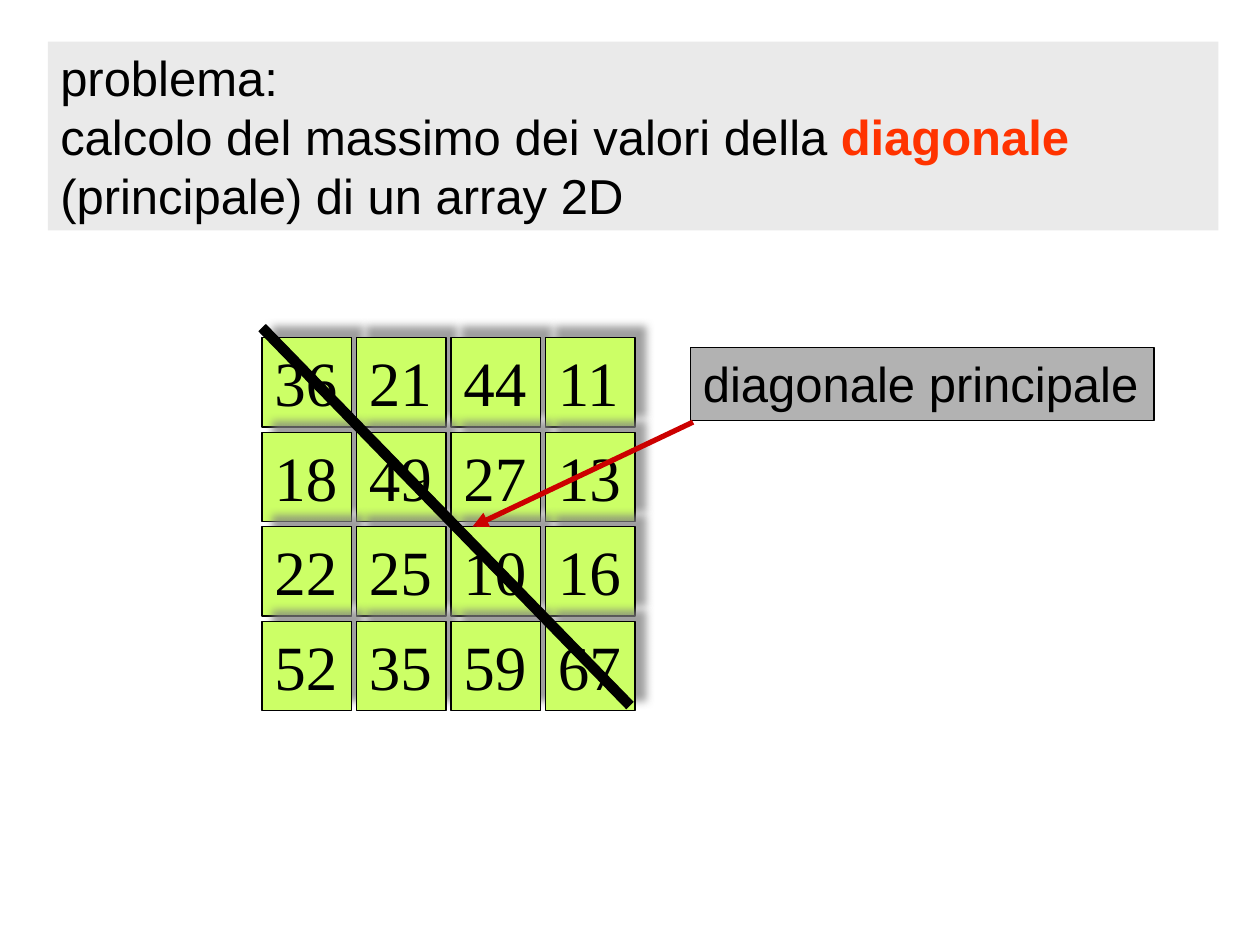
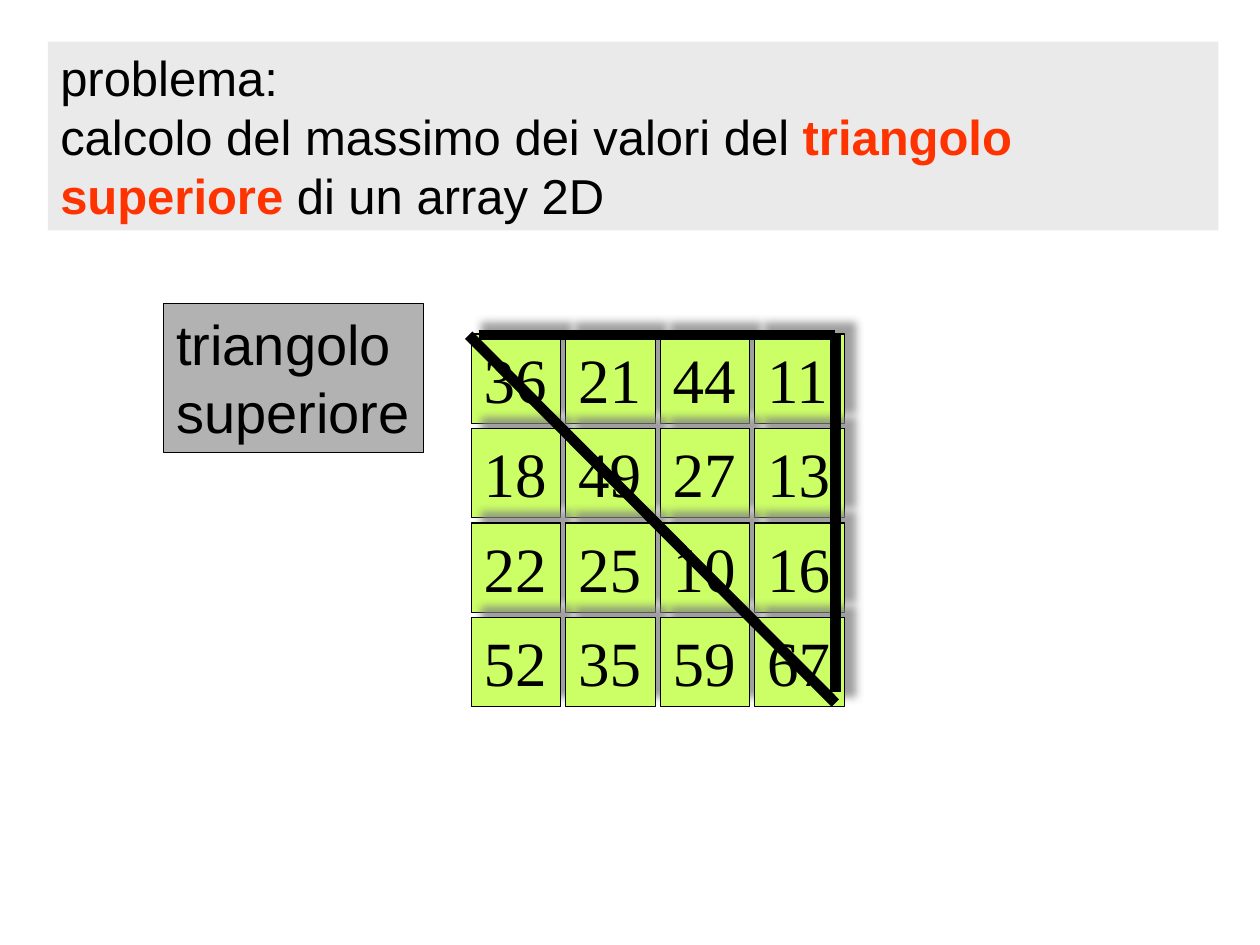
from dataclasses import dataclass

from lxml import etree
from pptx import Presentation, util as u
from pptx.dml.color import RGBColor
from pptx.enum import shapes, text
from pptx.oxml import ns


@dataclass(frozen=True)
class Theme:
    ink: str = "000000"
    band: str = "EAEAEA"
    cell: str = "CCFF66"
    label: str = "B2B2B2"
    accent: str = "FF3300"
    arrow: str = "CC0000"
    shade: str = "808080"
    sans: str = "Arial"
    serif: str = "Times New Roman"
    head: int = 28
    digit: int = 36
    thin: float = 0.75
    thick: float = 6


VALUES = [
    [36, 21, 44, 11],
    [18, 49, 27, 13],
    [22, 25, 10, 16],
    [52, 35, 59, 67],
]
SIDE, STEP = 0.71, 0.75


class Deck:
    def __init__(self, theme):
        self.theme = theme
        self.prs = Presentation()
        self.prs.slide_width = u.Inches(10)
        self.prs.slide_height = u.Inches(7.5)
        self.slide = None

    def page(self):
        self.slide = self.prs.slides.add_slide(self.prs.slide_layouts[6])

    def style(self, run, font, size, color=None, bold=False):
        run.font.name = font
        run.font.size = u.Pt(size)
        run.font.bold = bold
        run.font.color.rgb = RGBColor.from_string(color or self.theme.ink)

    def box(self, x, y, w, h, fill, words, font, size, edge=True, wrap=False):
        """Filled rectangle with left-aligned text."""
        rect = self.slide.shapes.add_shape(
            shapes.MSO_SHAPE.RECTANGLE, *map(u.Inches, (x, y, w, h)))
        rect.shadow.inherit = False
        rect.fill.solid()
        rect.fill.fore_color.rgb = RGBColor.from_string(fill)
        if edge:
            rect.line.color.rgb = RGBColor.from_string(self.theme.ink)
            rect.line.width = u.Pt(self.theme.thin)
        else:
            rect.line.fill.background()
        frame = rect.text_frame
        frame.text = words
        frame.word_wrap = wrap
        frame.auto_size = text.MSO_AUTO_SIZE.SHAPE_TO_FIT_TEXT
        frame.vertical_anchor = text.MSO_ANCHOR.TOP
        for para in frame.paragraphs:
            para.alignment = text.PP_ALIGN.LEFT
            for run in para.runs:
                self.style(run, font, size)
        return rect

    def title(self, before, key, after):
        """Grey band whose second paragraph stresses the key words."""
        t = self.theme
        band = self.box(0.38, 0.33, 9.29, 1.5, t.band, f"problema:\n{before}",
                        t.sans, t.head, edge=False, wrap=True)
        para = band.text_frame.paragraphs[-1]
        for words, color, bold in ((key, t.accent, True), (after, t.ink, False)):
            run = para.add_run()
            run.text = words
            self.style(run, t.sans, t.head, color, bold)

    def label(self, x, y, w, h, words, size):
        self.box(x, y, w, h, self.theme.label, words, self.theme.sans, size)

    def shade(self, shape):
        """Soft shadow toward the upper right."""
        effect = shape._element.spPr.find(ns.qn("a:effectLst"))
        outer = etree.SubElement(
            effect, ns.qn("a:outerShdw"), blurRad=str(u.Pt(5)),
            dist=str(u.Pt(8.5)), dir=str(315 * 60000),
            algn="ctr", rotWithShape="0")
        color = etree.SubElement(outer, ns.qn("a:srgbClr"), val=self.theme.shade)
        etree.SubElement(color, ns.qn("a:alpha"), val="75000")

    def grid(self, left, top):
        t = self.theme
        for i, row in enumerate(VALUES):
            for j, value in enumerate(row):
                cell = self.box(left + j * STEP, top + i * STEP, SIDE, SIDE,
                                t.cell, str(value), t.serif, t.digit)
                self.shade(cell)

    def line(self, start, end, color=None, width=None, arrow=False):
        link = self.slide.shapes.add_connector(
            shapes.MSO_CONNECTOR.STRAIGHT, *map(u.Inches, (*start, *end)))
        link.line.color.rgb = RGBColor.from_string(color or self.theme.ink)
        link.line.width = u.Pt(width or self.theme.thick)
        props = link._element.spPr
        if arrow:
            etree.SubElement(props.find(ns.qn("a:ln")), ns.qn("a:tailEnd"),
                             type="triangle")
        etree.SubElement(props, ns.qn("a:effectLst"))


def main():
    theme = Theme()
    deck = Deck(theme)

    # Main diagonal
    deck.page()
    deck.grid(2.08, 2.68)
    deck.line((2.08, 2.6), (5, 5.6))
    deck.label(5.48, 2.76, 3.68, 0.58, "diagonale principale", 28)
    deck.line((5.5, 3.35), (3.75, 4.18), theme.arrow, 3, arrow=True)
    deck.title("calcolo del massimo dei valori della ", "diagonale",
               " (principale) di un array 2D")

    # Upper triangle
    deck.page()
    deck.grid(3.74, 2.65)
    deck.title("calcolo del massimo dei valori del ", "triangolo superiore",
               " di un array 2D")
    deck.label(1.3, 2.41, 2.06, 1.18, "triangolo\nsuperiore", 32)
    corner = (6.63, 2.66)
    deck.line((3.72, 2.66), (6.63, 5.58))
    deck.line((3.8, 2.66), corner)
    deck.line(corner, (6.63, 5.49))

    deck.prs.save("out.pptx")


if __name__ == "__main__":
    main()
